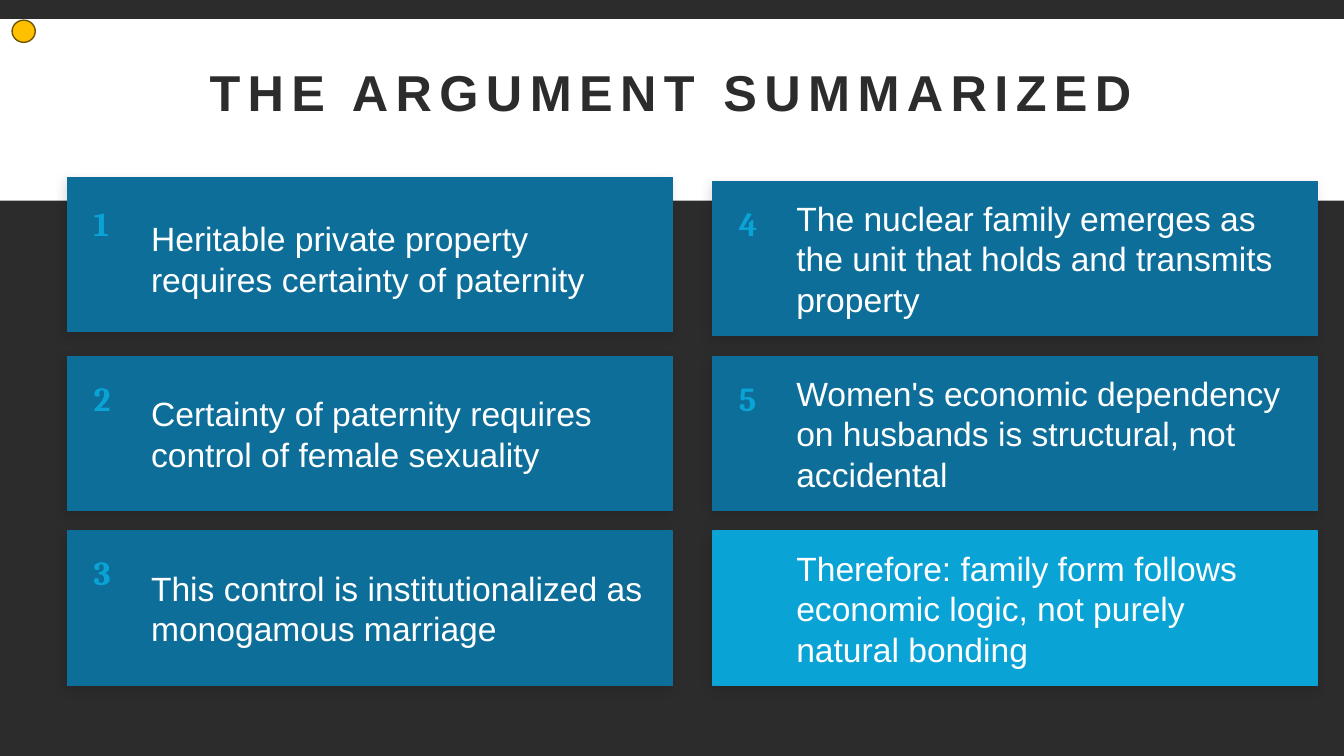
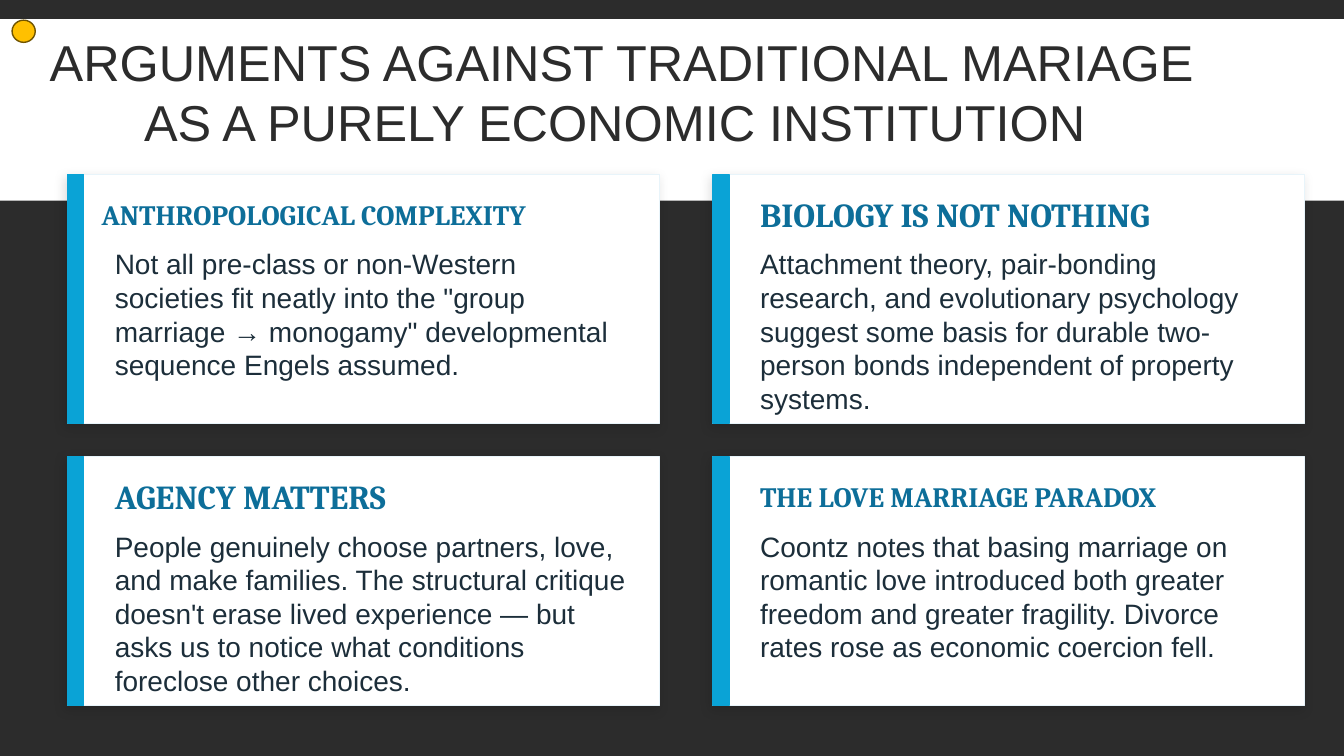
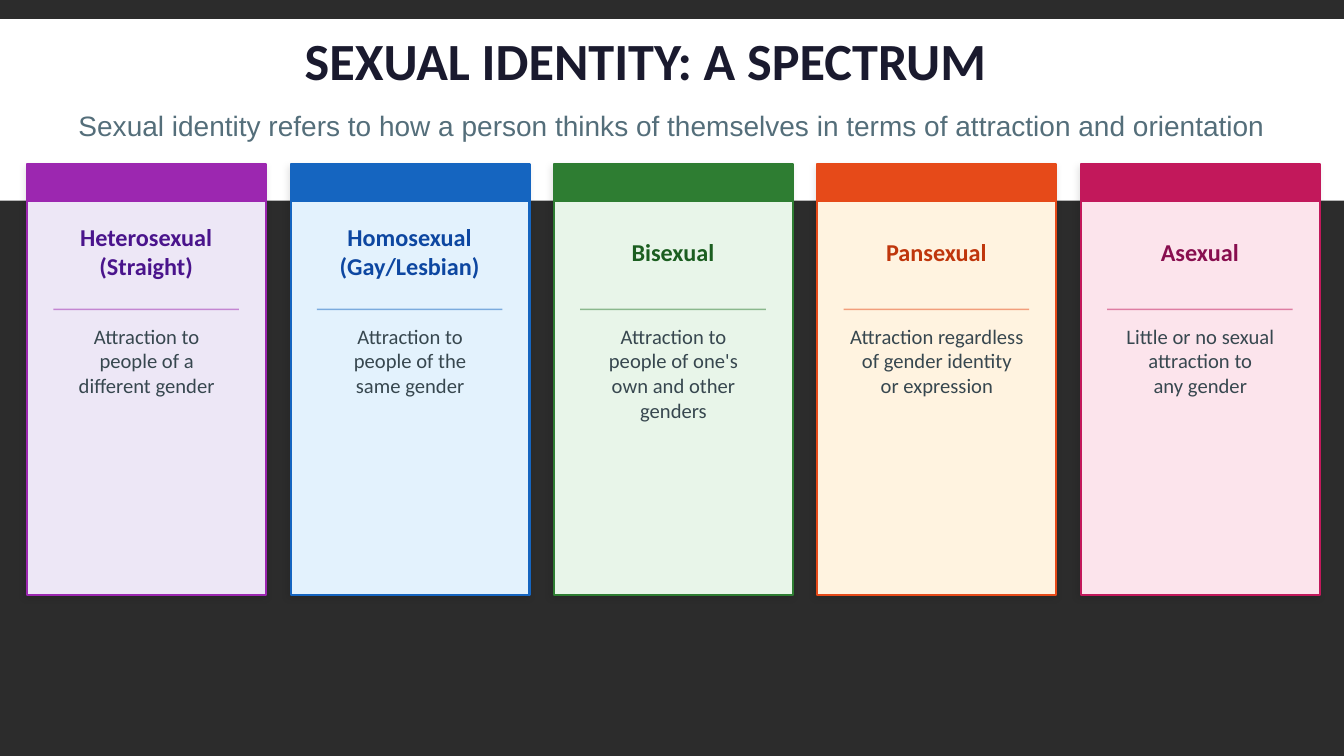
"""Build three slides on marriage, economics and sexual identity."""
from lxml import etree
from pptx import Presentation
from pptx.dml.color import RGBColor
from pptx.enum import shapes, text
from pptx.oxml import ns
from pptx.util import Inches, Pt

DARK = RGBColor(0x2C, 0x2C, 0x2C)
WHITE = RGBColor(0xFF, 0xFF, 0xFF)
BLUE = RGBColor(0x0D, 0x6E, 0x99)
SKY = RGBColor(0x0A, 0xA3, 0xD6)
PALE = RGBColor(0xE8, 0xF4, 0xFA)
INK = RGBColor(0x1C, 0x2E, 0x3A)
GOLD = RGBColor(0xFF, 0xC0, 0x00)
BROWN = RGBColor(0x70, 0x54, 0x00)
NAVY = RGBColor(0x1A, 0x1A, 0x2E)
SLATE = RGBColor(0x54, 0x6E, 0x7A)
GREY = RGBColor(0x37, 0x47, 0x4F)
RECT = shapes.MSO_SHAPE.RECTANGLE
OVAL = shapes.MSO_SHAPE.OVAL
LEFT = text.PP_ALIGN.LEFT
MID = text.PP_ALIGN.CENTER
TOP = text.MSO_ANCHOR.TOP
HALF = text.MSO_ANCHOR.MIDDLE


def block(slide, area, fill, line=None, width=1, shade=None, kind=RECT):
    """Draw a filled shape; shade holds opacity, blur and distance."""
    shape = slide.shapes.add_shape(kind, *map(Inches, area))
    shape.fill.solid()
    shape.fill.fore_color.rgb = fill
    if line is None:
        shape.line.fill.background()
    else:
        shape.line.color.rgb = line
        shape.line.width = Pt(width)
    shape.shadow.inherit = False
    if shade:
        alpha, blur, dist = shade
        glow = etree.SubElement(
            shape.element.spPr.find(ns.qn("a:effectLst")), ns.qn("a:outerShdw"),
            blurRad=str(Pt(blur)), dist=str(Pt(dist)), dir="8100000",
            algn="bl", rotWithShape="0")
        tint = etree.SubElement(glow, ns.qn("a:srgbClr"), val="000000")
        etree.SubElement(tint, ns.qn("a:alpha"), val=str(alpha * 1000))


def write(slide, area, words, size, face, color, bold=False, align=LEFT,
          anchor=HALF, space=0):
    """Add a wrapped text box, one paragraph for each line of words."""
    frame = slide.shapes.add_textbox(*map(Inches, area)).text_frame
    frame.word_wrap = True
    frame.vertical_anchor = anchor
    frame.text = words
    for para in frame.paragraphs:
        para.alignment = align
        for run in para.runs:
            run.font.size = Pt(size)
            run.font.name = face
            run.font.bold = bold
            run.font.color.rgb = color
            if space:
                run.font._element.set("spc", str(space))


deck = Presentation()
deck.slide_width = Inches(13.33)
deck.slide_height = Inches(7.5)
back = deck.slide_master.background.fill
back.solid()
back.fore_color.rgb = DARK
pages = [deck.slides.add_slide(deck.slide_layouts[6]) for _ in range(3)]
for page in pages:
    block(page, (0, 0.19, 13.33, 1.8), WHITE)
claim, doubt, range_page = pages
soft = (12, 8, 3)

write(claim, (1.98, 0.67, 12, 0.47), "THE ARGUMENT SUMMARIZED", 36, "Arial",
      DARK, bold=True, space=530)
steps = [
    "Heritable private property requires certainty of paternity",
    "Certainty of paternity requires control of female sexuality",
    "This control is institutionalized as monogamous marriage",
    "The nuclear family emerges as the unit that holds and transmits property",
    "Women's economic dependency on husbands is structural, not accidental",
    "Therefore: family form follows economic logic, not purely natural bonding",
]
for i, step in enumerate(steps):
    col, row = divmod(i, 3)
    x, y = 0.67 + 6.4 * col, 1.8 + 1.735 * row
    last = i == len(steps) - 1
    color = SKY if last else BLUE
    top = 1.76 if i == 0 else y
    block(claim, (x, top, 6, 1.53), color, color, shade=soft)
    if not last:
        write(claim, (x + 0.16, y + 0.11, 0.6, 0.6), str(i + 1), 24, "Cambria",
              SKY, bold=True)
    write(claim, (x + 0.73, y + 0.13, 5.07, 1.27), step, 24, "Arial", WHITE)

write(doubt, (0.17, 0.57, 12, 0.67),
      "ARGUMENTS AGAINST TRADITIONAL MARIAGE AS A PURELY ECONOMIC INSTITUTION ",
      36, "Arial", DARK, align=MID)
cards = [
    ("ANTHROPOLOGICAL COMPLEXITY", 20, 0.24,
     "Not all pre-class or non-Western societies fit neatly into the \"group "
     "marriage → monogamy\" developmental sequence Engels assumed."),
    ("BIOLOGY IS NOT NOTHING", 24, 0.37,
     "Attachment theory, pair-bonding research, and evolutionary psychology "
     "suggest some basis for durable two-person bonds independent of property "
     "systems."),
    ("AGENCY MATTERS", 24, 0.37,
     "People genuinely choose partners, love, and make families. The structural "
     "critique doesn't erase lived experience — but asks us to notice what "
     "conditions foreclose other choices."),
    ("THE LOVE MARRIAGE PARADOX", 20, 0.37,
     "Coontz notes that basing marriage on romantic love introduced both greater "
     "freedom and greater fragility. Divorce rates rose as economic coercion "
     "fell."),
]
for i, (head, size, inset, body) in enumerate(cards):
    row, col = divmod(i, 2)
    x, y = 0.67 + 6.4 * col, 1.73 + 2.8 * row
    block(doubt, (x, y, 5.87, 2.47), WHITE, PALE, shade=soft)
    block(doubt, (x, y, 0.16, 2.47), SKY, SKY)
    write(doubt, (x + inset, y + 0.16, 5.7 - inset, 0.47), head, size, "Cambria",
          BLUE, bold=True)
    write(doubt, (x + 0.37, y + 0.67, 5.33, 1.6), body, 20, "Arial", INK,
          anchor=TOP)

for page in (claim, doubt):
    block(page, (0.12, 0.2, 0.23, 0.22), GOLD, BROWN, kind=OVAL)

write(range_page, (0.27, 0.23, 12.27, 0.73), "SEXUAL IDENTITY: A SPECTRUM", 37.3,
      "Calibri", NAVY, bold=True, align=MID)
write(range_page, (0.53, 0.99, 12.27, 0.51),
      "Sexual identity refers to how a person thinks of themselves in terms of "
      "attraction and orientation", 20, "Arial", SLATE, align=MID)
kinds = [
    ("Heterosexual\n(Straight)",
     "Attraction to\npeople of a\ndifferent gender",
     RGBColor(0xED, 0xE7, 0xF6), RGBColor(0x9C, 0x27, 0xB0),
     RGBColor(0x4A, 0x14, 0x8C)),
    ("Homosexual\n(Gay/Lesbian)",
     "Attraction to\npeople of the\nsame gender",
     RGBColor(0xE3, 0xF2, 0xFD), RGBColor(0x15, 0x65, 0xC0),
     RGBColor(0x0D, 0x47, 0xA1)),
    ("Bisexual",
     "Attraction to\npeople of one's\nown and other genders",
     RGBColor(0xE8, 0xF5, 0xE9), RGBColor(0x2E, 0x7D, 0x32),
     RGBColor(0x1B, 0x5E, 0x20)),
    ("Pansexual",
     "Attraction regardless\nof gender identity\nor expression",
     RGBColor(0xFF, 0xF3, 0xE0), RGBColor(0xE6, 0x4A, 0x19),
     RGBColor(0xBF, 0x36, 0x0C)),
    ("Asexual",
     "Little or no sexual\nattraction to\nany gender",
     RGBColor(0xFC, 0xE4, 0xEC), RGBColor(0xC2, 0x18, 0x5B),
     RGBColor(0x88, 0x0E, 0x4F)),
]
for i, (name, sense, pale, main, deep) in enumerate(kinds):
    x = 0.27 + 2.6125 * i
    block(range_page, (x, 1.63, 2.37, 4.27), pale, main, 1.5, (10, 5, 2))
    block(range_page, (x, 1.63, 2.37, 0.37), main, main)
    write(range_page, (x + 0.1, 2.03, 2.16, 0.93), name, 17.3, "Calibri", deep,
          bold=True, align=MID)
    rule = range_page.shapes.add_connector(
        shapes.MSO_CONNECTOR.STRAIGHT, Inches(x + 0.26), Inches(3.07),
        Inches(x + 2.1), Inches(3.07))
    rule.line.color.rgb = main
    rule.line.width = Pt(1)
    props = rule._element.spPr
    etree.SubElement(props.find(".//" + ns.qn("a:srgbClr")), ns.qn("a:alpha"),
                     val="50000")
    etree.SubElement(props, ns.qn("a:effectLst"))
    write(range_page, (x + 0.13, 3.16, 2.11, 2.53), sense, 14.7, "Calibri", GREY,
          align=MID, anchor=TOP)

deck.save("out.pptx")
